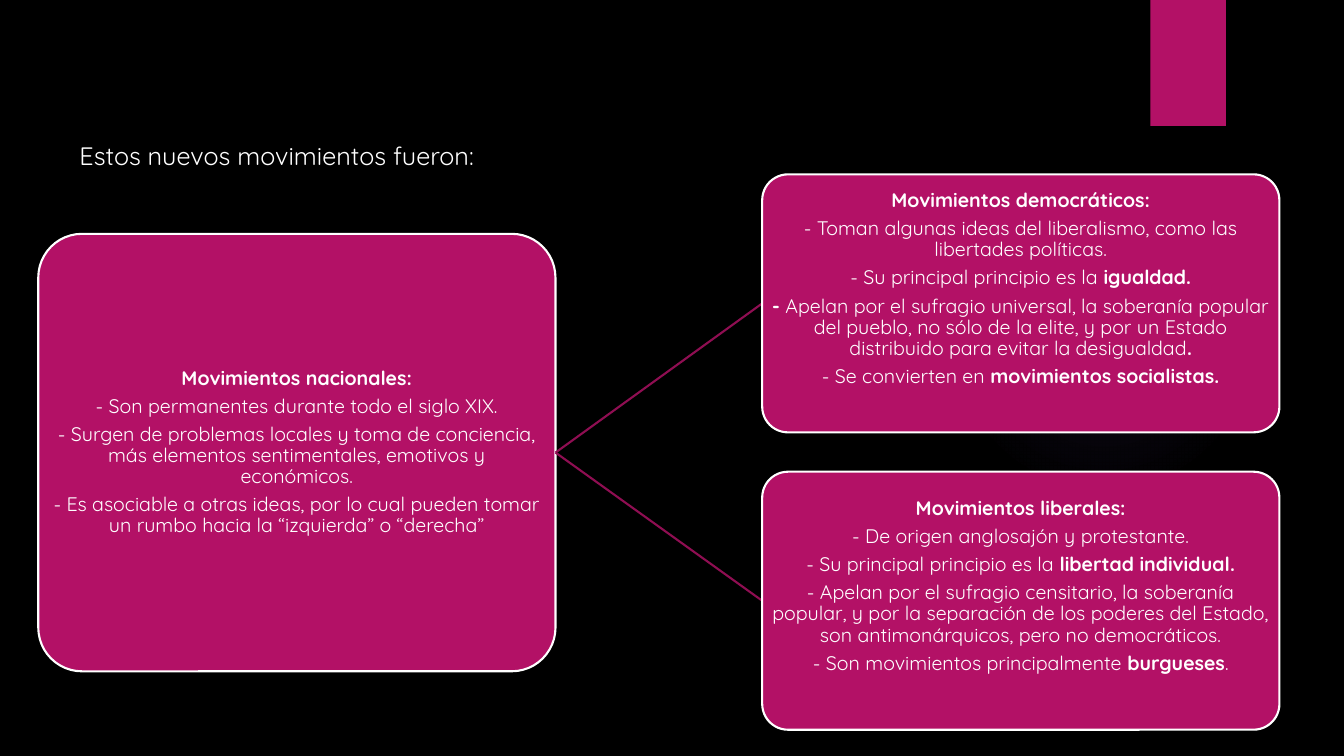
import lxml.etree
import pptx
import pptx.dml.color
import pptx.enum.shapes
import pptx.enum.text
import pptx.oxml.ns
import pptx.util

Inches = pptx.util.Inches
Pt = pptx.util.Pt
SHAPE = pptx.enum.shapes.MSO_SHAPE
ALIGN = pptx.enum.text.PP_ALIGN
ANCHOR = pptx.enum.text.MSO_ANCHOR
qn = pptx.oxml.ns.qn

FONT = "Quicksand"
MAGENTA, PLUM, WHITE, VIOLET = "B31166", "8F0E52", "FFFFFF", "9B6BF2"
CARD_WIDTH = 5.13
BLANK_LINE = 0.28

# Text between ** marks is bold.
NATIONAL = [
    "**Movimientos nacionales:**",
    "- Son permanentes durante todo el siglo XIX.",
    "- Surgen de problemas locales y toma de conciencia, más elementos "
    "sentimentales, emotivos y económicos.",
    "- Es asociable a otras ideas, por lo cual pueden tomar un rumbo hacia la "
    "“izquierda” o “derecha”",
]
DEMOCRATIC = [
    "**Movimientos democráticos:**",
    "- Toman algunas ideas del liberalismo, como las libertades políticas.",
    "- Su principal principio es la **igualdad.**",
    "**- **Apelan por el sufragio universal, la soberanía popular del pueblo, "
    "no sólo de la elite, y por un Estado distribuido para evitar la "
    "desigualdad**.**",
    "- Se convierten en **movimientos socialistas.**",
]
LIBERAL = [
    "**Movimientos liberales:**",
    "- De origen anglosajón y protestante.",
    "- Su principal principio es la **libertad individual.**",
    "- Apelan por el sufragio censitario, la soberanía popular, y por la "
    "separación de los poderes del Estado, son antimonárquicos, pero no "
    "democráticos.",
    "- Son movimientos principalmente **burgueses**.",
]


def rgb(value):
    return pptx.dml.color.RGBColor.from_string(value)


def add_plain_shape(page, kind, left, top, width, height, color):
    """Add a filled shape with neither outline nor shadow."""
    shape = page.shapes.add_shape(
        kind, Inches(left), Inches(top), Inches(width), Inches(height))
    shape.shadow.inherit = False
    shape.fill.solid()
    shape.fill.fore_color.rgb = rgb(color)
    shape.line.fill.background()
    return shape


def add_glow(page, left, top, size):
    """Add a faint radial glow that fades out toward its edge."""
    glow = add_plain_shape(page, SHAPE.OVAL, left, top, size, size, VIOLET)
    gradient = lxml.etree.Element(qn("a:gradFill"))
    stops = lxml.etree.SubElement(gradient, qn("a:gsLst"))
    for position, opacity in ((0, 7), (36, 6), (69, 0)):
        stop = lxml.etree.SubElement(stops, qn("a:gs"), pos=str(position * 1000))
        color = lxml.etree.SubElement(stop, qn("a:srgbClr"), val=VIOLET)
        lxml.etree.SubElement(color, qn("a:alpha"), val=str(opacity * 1000))
    radial = lxml.etree.SubElement(gradient, qn("a:path"))
    radial.set("path", "circle")
    center = dict.fromkeys("ltrb", "50000")
    lxml.etree.SubElement(radial, qn("a:fillToRect"), center)
    properties = glow.element.spPr
    properties.replace(properties.find(qn("a:solidFill")), gradient)


def add_title(page, left, top, width, height):
    box = page.shapes.add_textbox(
        Inches(left), Inches(top), Inches(width), Inches(height))
    box.text_frame.word_wrap = True
    para = box.text_frame.paragraphs[0]
    para.text = "Estos nuevos movimientos fueron:"
    para.font.name = FONT
    para.font.size = Pt(18)
    para.font.color.rgb = rgb(WHITE)


def add_card(page, left, top, height, lines, space_below=0):
    """Add a rounded card; space_below lifts its centred text."""
    card = add_plain_shape(
        page, SHAPE.ROUNDED_RECTANGLE, left, top, CARD_WIDTH, height, MAGENTA)
    card.adjustments[0] = 0.1
    card.line.color.rgb = rgb(WHITE)
    card.line.width = Pt(1.5)
    frame = card.text_frame
    frame.word_wrap = True
    frame.vertical_anchor = ANCHOR.MIDDLE
    frame.margin_left = frame.margin_right = frame.margin_top = Inches(0.01)
    frame.margin_bottom = Inches(0.01 + space_below)
    for index, line in enumerate(lines):
        para = frame.add_paragraph() if index else frame.paragraphs[0]
        para.alignment = ALIGN.CENTER
        para.line_spacing = 0.9
        para.space_after = Pt(4.9)
        para.font.name = FONT
        para.font.size = Pt(14)
        para.font.color.rgb = rgb(WHITE)
        for part, text in enumerate(line.split("**")):
            if text:
                span = para.add_run()
                span.text = text
                span.font.bold = part % 2 == 1


def add_branch(page, start, end):
    branch = page.shapes.add_connector(
        pptx.enum.shapes.MSO_CONNECTOR.STRAIGHT,
        *(Inches(value) for value in start + end))
    branch.line.color.rgb = rgb(PLUM)
    branch.line.width = Pt(1.5)
    lxml.etree.SubElement(branch.element.spPr, qn("a:effectLst"))


def add_tree(page, left, top):
    """Add the root card and, to its right, the two cards it branches into."""
    root_height, leaf_height, leaf_step = 4.34, 2.56, 2.95
    leaf_left = left + 7.18
    fork = (left + CARD_WIDTH, top + root_height / 2)
    add_card(page, left, top, root_height, NATIONAL)
    for index, lines in enumerate((DEMOCRATIC, LIBERAL)):
        leaf_top = top - 0.59 + index * leaf_step
        add_branch(page, fork, (leaf_left, leaf_top + leaf_height / 2))
        add_card(page, leaf_left, leaf_top, leaf_height, lines, BLANK_LINE)


def build_movements(deck):
    page = deck.slides.add_slide(deck.slide_layouts[6])
    page.background.fill.solid()
    page.background.fill.fore_color.rgb = rgb("000000")
    add_glow(page, 9.41, 1.83, 3.08)
    add_plain_shape(page, SHAPE.RECTANGLE, 11.41, 0, 0.75, 1.25, MAGENTA)
    add_tree(page, 0.38, 2.32)
    add_title(page, 0.69, 1.34, 6.8, 0.4)


def main():
    deck = pptx.Presentation()
    deck.slide_width = Inches(13.33)
    deck.slide_height = Inches(7.5)
    build_movements(deck)
    deck.save("out.pptx")


if __name__ == "__main__":
    main()
